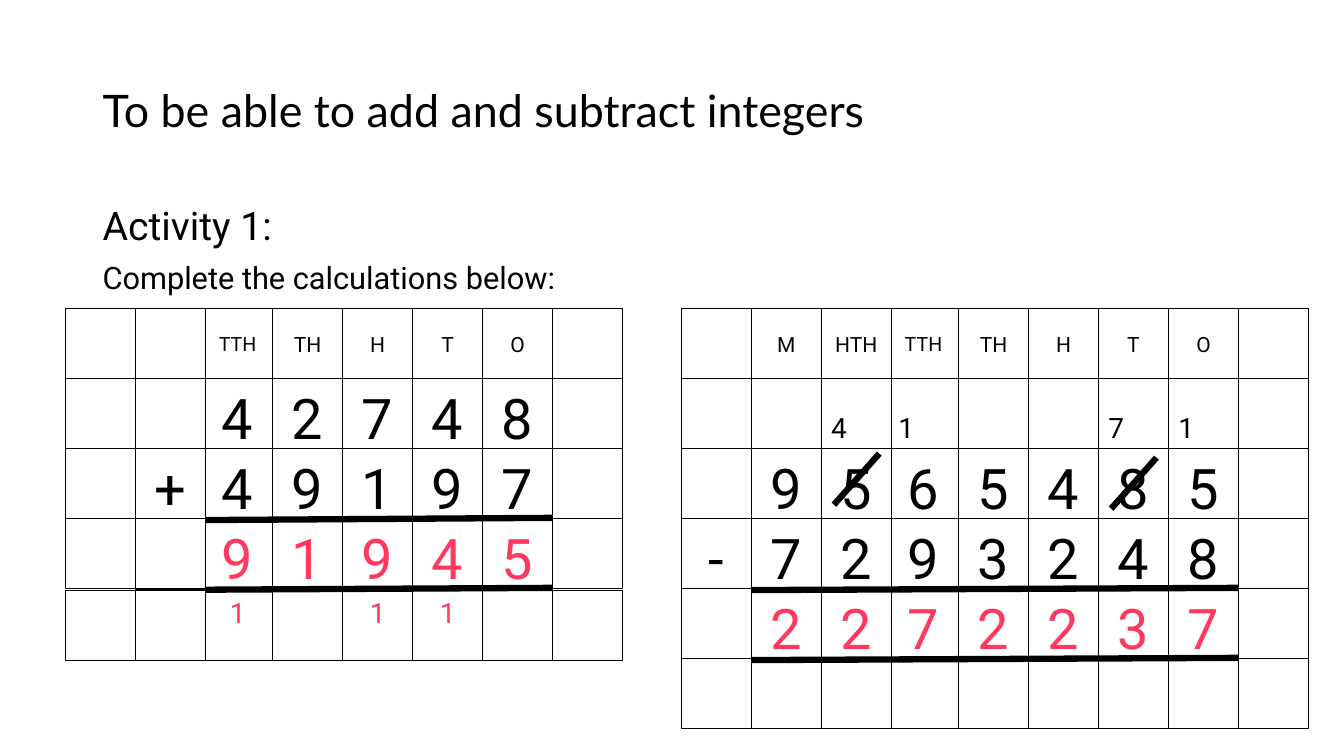
from pptx import Presentation
from pptx.dml.color import RGBColor
from pptx.enum import shapes, text
from pptx.oxml.ns import qn
from pptx.util import Pt

COLOURS = {"ink": "000000", "paper": "FFFFFF", "answer": "FF3860"}
CELL = 50
TUCK = 2  # columns from the split onwards sit this much further left

TOP, MIDDLE, BOTTOM = (text.MSO_ANCHOR.TOP, text.MSO_ANCHOR.MIDDLE,
                       text.MSO_ANCHOR.BOTTOM)
LEFT, CENTRE = text.PP_ALIGN.LEFT, text.PP_ALIGN.CENTER
ROW_STYLES = {
    "heading": dict(size=15, colour="ink", anchor=MIDDLE, align=CENTRE),
    "number": dict(size=40, colour="ink", anchor=TOP, align=CENTRE),
    "answer": dict(size=40, colour="answer", anchor=TOP, align=CENTRE),
    "carry": dict(size=20, colour="answer", anchor=TOP, align=CENTRE),
    "exchange": dict(size=20, colour="ink", anchor=BOTTOM, align=LEFT),
}

ADDITION = dict(left=46.8, top=220.5, split=2, last_row_gap=1.4, rows=[
    ("heading", ["", "", "TTH", "TH", "H", "T", "O", ""]),
    ("number", "  42748 "),
    ("number", " +49197 "),
    ("answer", "  91945 "),
    ("carry", "  1 11  "),
])
SUBTRACTION = dict(left=486.7, top=220.5, split=3, last_row_gap=0, rows=[
    ("heading", ["", "M", "HTH", "TTH", "TH", "H", "T", "O", ""]),
    ("exchange", "  41  71 "),
    ("number", " 9565485 "),
    ("number", "-7293248 "),
    ("answer", " 2272237 "),
    ("number", " " * 9),
])


def colour(name):
    return RGBColor.from_string(COLOURS[name])


def write(paragraph, words, size, name="ink", face="Roboto", **layout):
    for key, value in layout.items():
        setattr(paragraph, key, value)
    run = paragraph.add_run()
    run.text = words
    for key, value in dict(name=face, size=Pt(size)).items():
        setattr(run.font, key, value)
    run.font.color.rgb = colour(name)


def add_title(slide, left, top, width, height):
    title = slide.shapes.title
    for key, value in dict(left=left, top=top, width=width, height=height).items():
        setattr(title, key, Pt(value))
    frame = title.text_frame
    frame.auto_size = text.MSO_AUTO_SIZE.NONE
    frame.vertical_anchor = MIDDLE
    write(frame.paragraphs[0], "To be able to add and subtract integers", 32,
          face="Lato", alignment=LEFT, line_spacing=0.9)


def add_instructions(slide, left, top, width, height):
    frame = slide.shapes.add_textbox(
        Pt(left), Pt(top), Pt(width), Pt(height)).text_frame
    frame.word_wrap = True
    write(frame.paragraphs[0], "Activity 1:", 28, line_spacing=0.9)
    write(frame.add_paragraph(), "Complete the calculations below:", 22,
          line_spacing=0.9, space_before=Pt(10))


def column_left(grid, column):
    return grid["left"] + column * CELL - (TUCK if column >= grid["split"] else 0)


def row_top(grid, row):
    gap = grid["last_row_gap"] if row == len(grid["rows"]) - 1 else 0
    return grid["top"] + row * CELL + gap


def add_cell(slide, left, top, entry, style):
    cell = slide.shapes.add_shape(shapes.MSO_SHAPE.RECTANGLE,
                                  Pt(left), Pt(top), Pt(CELL), Pt(CELL))
    cell.shadow.inherit = False
    cell.fill.solid()
    cell.fill.fore_color.rgb = colour("paper")
    cell.line.color.rgb = colour("ink")
    cell.line.width = Pt(1)
    if entry.strip():
        cell.text_frame.vertical_anchor = style["anchor"]
        size = 14 if entry == "TTH" else style["size"]
        write(cell.text_frame.paragraphs[0], entry, size, style["colour"],
              alignment=style["align"])


def add_columns(slide, grid, columns):
    for column in columns:
        for row, (kind, entries) in enumerate(grid["rows"]):
            add_cell(slide, column_left(grid, column), row_top(grid, row),
                     entries[column], ROW_STYLES[kind])


def add_stroke(slide, x1, y1, x2, y2):
    stroke = slide.shapes.add_connector(shapes.MSO_CONNECTOR.STRAIGHT,
                                        Pt(x1), Pt(y1), Pt(x2), Pt(y2))
    stroke.line.color.rgb = colour("ink")
    stroke.line.width = Pt(4.5)
    properties = stroke._element.spPr
    properties.append(properties.makeelement(qn("a:effectLst"), {}))


def add_rule(slide, grid, first, last, row):
    """Answer rule above a row, rising slightly to the right."""
    y = grid["top"] + row * CELL
    add_stroke(slide, column_left(grid, first), y + 1,
               column_left(grid, last), y - 0.6)


def add_strike(slide, grid, column, row, drop):
    """Slash through an exchanged digit."""
    x, y = column_left(grid, column) + 9, row_top(grid, row) + drop
    add_stroke(slide, x, y + 36.5, x + 32.4, y)


def add_addition(slide, grid):
    # The left-hand columns cover the start of the lower rule
    add_columns(slide, grid, range(grid["split"], 8))
    add_rule(slide, grid, 1, 7, 4)
    add_rule(slide, grid, 2, 7, 3)
    add_columns(slide, grid, range(grid["split"]))


def add_subtraction(slide, grid):
    add_columns(slide, grid, range(grid["split"], 9))
    add_columns(slide, grid, range(grid["split"]))
    for row in (4, 5):
        add_rule(slide, grid, 1, 8, row)
    for column, drop in ((6, 6.4), (2, 3.5)):
        add_strike(slide, grid, column, 2, drop)


def main():
    deck = Presentation()
    deck.slide_width, deck.slide_height = Pt(960), Pt(540)
    slide = deck.slides.add_slide(deck.slide_layouts[5])
    add_title(slide, 66.2, 28.8, 691.2, 104.4)
    add_instructions(slide, 66.2, 144, 828, 342.7)
    add_subtraction(slide, SUBTRACTION)
    add_addition(slide, ADDITION)
    deck.save("out.pptx")


if __name__ == "__main__":
    main()
